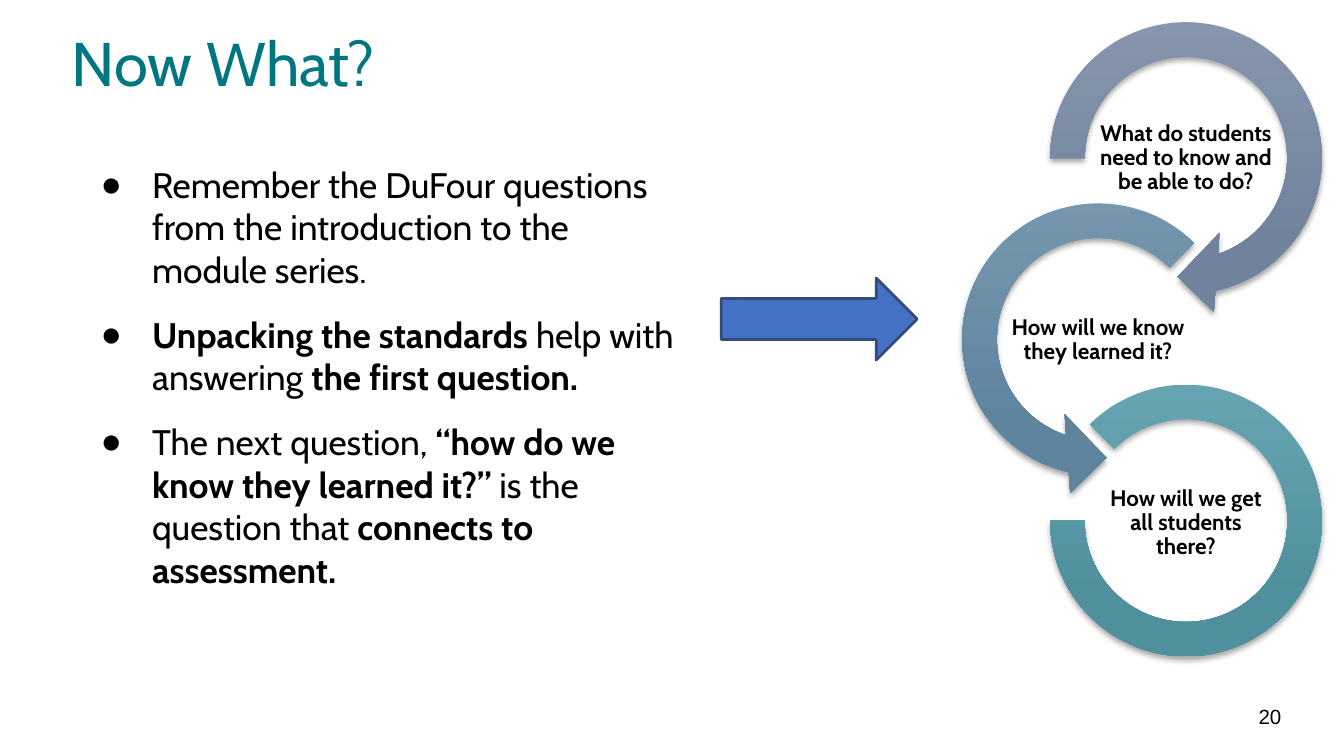
from math import cos, radians, sin, tan

from pptx import Presentation
from pptx.dml.color import RGBColor
from pptx.enum.shapes import MSO_SHAPE
from pptx.enum.text import MSO_ANCHOR, PP_ALIGN
from pptx.oxml import parse_xml
from pptx.oxml.ns import nsdecls, qn
from pptx.util import Pt

COLORS = {
    "title": "007780",
    "text": "000000",
    "arrow": "4472C4",
    "arrow_line": "364A7D",
    "know": ("8796AD", "70829C"),
    "learned": ("7697AE", "5F849E"),
    "there": ("67A4B1", "50909D"),
}
OUTER, INNER = 72.8, 54.2
RIGHT_X, LEFT_X = 635.4, 588.3
FIRST_Y, PITCH = 84.7, 97.1
ARROW_HEAD = [(14.9, 82.3), (-4.5, 63.5), (17.9, 40.1)]


def arc_controls(radius, start, end, curves=3):
    step = radians(end - start) / curves
    reach = 4 / 3 * tan(step / 4)
    points = []
    for index in range(curves):
        first = radians(start) + index * step
        last = first + step
        points += [
            (radius * (cos(first) - reach * sin(first)), radius * (sin(first) + reach * cos(first))),
            (radius * (cos(last) + reach * sin(last)), radius * (sin(last) - reach * cos(last))),
            (radius * cos(last), radius * sin(last)),
        ]
    return points


class SlideBuilder:
    font = "Cabin"

    def __init__(self, slide):
        self.slide = slide

    def text(self, box, paragraphs, size, color="text", font=None, bold=None,
             align=None, spacing=None, after=None, anchor=MSO_ANCHOR.TOP,
             inset=(5.4, 2.7), bullet=None):
        shape = self.slide.shapes.add_textbox(*map(Pt, box))
        frame = shape.text_frame
        frame.word_wrap = True
        frame.vertical_anchor = anchor
        frame.margin_left = frame.margin_right = Pt(inset[0])
        frame.margin_top = frame.margin_bottom = Pt(inset[1])
        for index, runs in enumerate(paragraphs):
            paragraph = frame.paragraphs[0] if index == 0 else frame.add_paragraph()
            if bullet:
                self.bullet(paragraph, bullet)
            paragraph.alignment = align
            paragraph.line_spacing = spacing
            if after:
                paragraph.space_after = Pt(after)
            paragraph.font.name = font or self.font
            paragraph.font.size = Pt(size)
            paragraph.font.bold = bold
            paragraph.font.color.rgb = RGBColor.from_string(COLORS[color])
            for words, strong in runs:
                run = paragraph.add_run()
                run.text = words
                if strong:
                    run.font.bold = True

    def bullet(self, paragraph, character):
        properties = paragraph._p.get_or_add_pPr()
        properties.set("marL", str(Pt(36)))
        properties.set("indent", str(Pt(-27.5)))
        for element in (
            f'<a:buClr {nsdecls("a")}><a:srgbClr val="{COLORS["text"]}"/></a:buClr>',
            f'<a:buFont {nsdecls("a")} typeface="Arial"/>',
            f'<a:buChar {nsdecls("a")} char="{character}"/>',
        ):
            properties.append(parse_xml(element))

    def block_arrow(self, box):
        shape = self.slide.shapes.add_shape(MSO_SHAPE.RIGHT_ARROW, *map(Pt, box))
        shape.shadow.inherit = False
        shape.fill.solid()
        shape.fill.fore_color.rgb = RGBColor.from_string(COLORS["arrow"])
        shape.line.color.rgb = RGBColor.from_string(COLORS["arrow_line"])
        shape.line.width = Pt(1.5)

    def ring_style(self, shape, color):
        shape.fill.gradient()
        shape.fill.gradient_angle = 270
        for stop, position, value in zip(shape.fill.gradient_stops, (0, 0.78), COLORS[color]):
            stop.position = position
            stop.color.rgb = RGBColor.from_string(value)
        shape.line.fill.background()
        shape.shadow.inherit = False
        shape._element.spPr.find(qn("a:effectLst")).append(parse_xml(
            f'<a:outerShdw {nsdecls("a")} blurRad="{Pt(3)}" dist="{Pt(2)}" dir="5400000">'
            '<a:srgbClr val="000000"><a:alpha val="35000"/></a:srgbClr></a:outerShdw>'))

    def ring_arrow(self, center_x, center_y, start, color, mirror=1):
        first = (OUTER * cos(radians(start)), OUTER * sin(radians(start)))
        outer = arc_controls(OUTER, start, 77.5)
        inner_start = (INNER * cos(radians(71.5)), INNER * sin(radians(71.5)))
        inner = arc_controls(INNER, 71.5, start)
        head = ARROW_HEAD + [inner_start]
        outline = [first] + outer + head + inner
        points = [(Pt(center_x + mirror * x), Pt(center_y + y)) for x, y in outline]
        builder = self.slide.shapes.build_freeform(*points[0], scale=1.0)
        builder.add_line_segments(points[1:], close=True)
        shape = builder.convert_to_shape()
        lines = list(shape._element.iter(qn("a:lnTo")))
        self.curve(lines[:len(outer)])
        self.curve(lines[len(outer) + len(head):])
        self.ring_style(shape, color)

    def curve(self, lines):
        for index in range(0, len(lines), 3):
            bezier = parse_xml(f'<a:cubicBezTo {nsdecls("a")}/>')
            lines[index].addprevious(bezier)
            for line in lines[index:index + 3]:
                bezier.append(line[0])
                line.getparent().remove(line)

    def ring_arc(self, center_x, center_y, color):
        box = (center_x - OUTER, center_y - OUTER, 2 * OUTER, 2 * OUTER)
        shape = self.slide.shapes.add_shape(MSO_SHAPE.BLOCK_ARC, *map(Pt, box))
        for index, value in enumerate((135, 108, 0.127)):
            shape.adjustments[index] = value
        self.ring_style(shape, color)

    def ring_label(self, center_x, top, words):
        self.text((center_x - 47.2, top, 94.4, 46.8), [[(words, False)]], 12, bold=True,
                  align=PP_ALIGN.CENTER, spacing=0.9, anchor=MSO_ANCHOR.MIDDLE,
                  inset=(0.6, 0.6))


def main():
    presentation = Presentation()
    presentation.slide_width, presentation.slide_height = Pt(720), Pt(405)
    slide = presentation.slides.add_slide(presentation.slide_layouts[6])
    builder = SlideBuilder(slide)

    builder.text((33.1, 15.1, 507.6, 77.8), [[("Now What?", False)]], 33,
                 color="title", spacing=0.9)

    builder.ring_arrow(RIGHT_X, FIRST_Y, -180, "know")
    builder.ring_label(RIGHT_X, 61.2, "What do students need to know and be able to do?")
    builder.ring_arrow(LEFT_X, FIRST_Y + PITCH, -135, "learned", mirror=-1)
    builder.ring_label(LEFT_X, 159, "How will we know they learned it?")
    builder.ring_arc(RIGHT_X, FIRST_Y + 2 * PITCH, "there")
    builder.ring_label(RIGHT_X, 257, "How will we get all students there?")

    builder.block_arrow((386.4, 149, 105, 43.9))
    builder.text((651.6, 373, 40.3, 21.6), [[("20", False)]], 11, font="Arial",
                 align=PP_ALIGN.RIGHT, anchor=MSO_ANCHOR.MIDDLE)

    points = [
        [("Remember the DuFour questions from the introduction to the module series.", False)],
        [("Unpacking the standards ", True), ("help with answering ", False),
         ("the first question.", True)],
        [("The next question,", False), (" “how do we know they learned it?”", True),
         (" is the question that ", False), ("connects to assessment.", True)],
    ]
    builder.text((38.4, 80.1, 335.5, 247), points, 19, after=12, inset=(7.2, 7.2), bullet="●")

    presentation.save("out.pptx")


if __name__ == "__main__":
    main()
